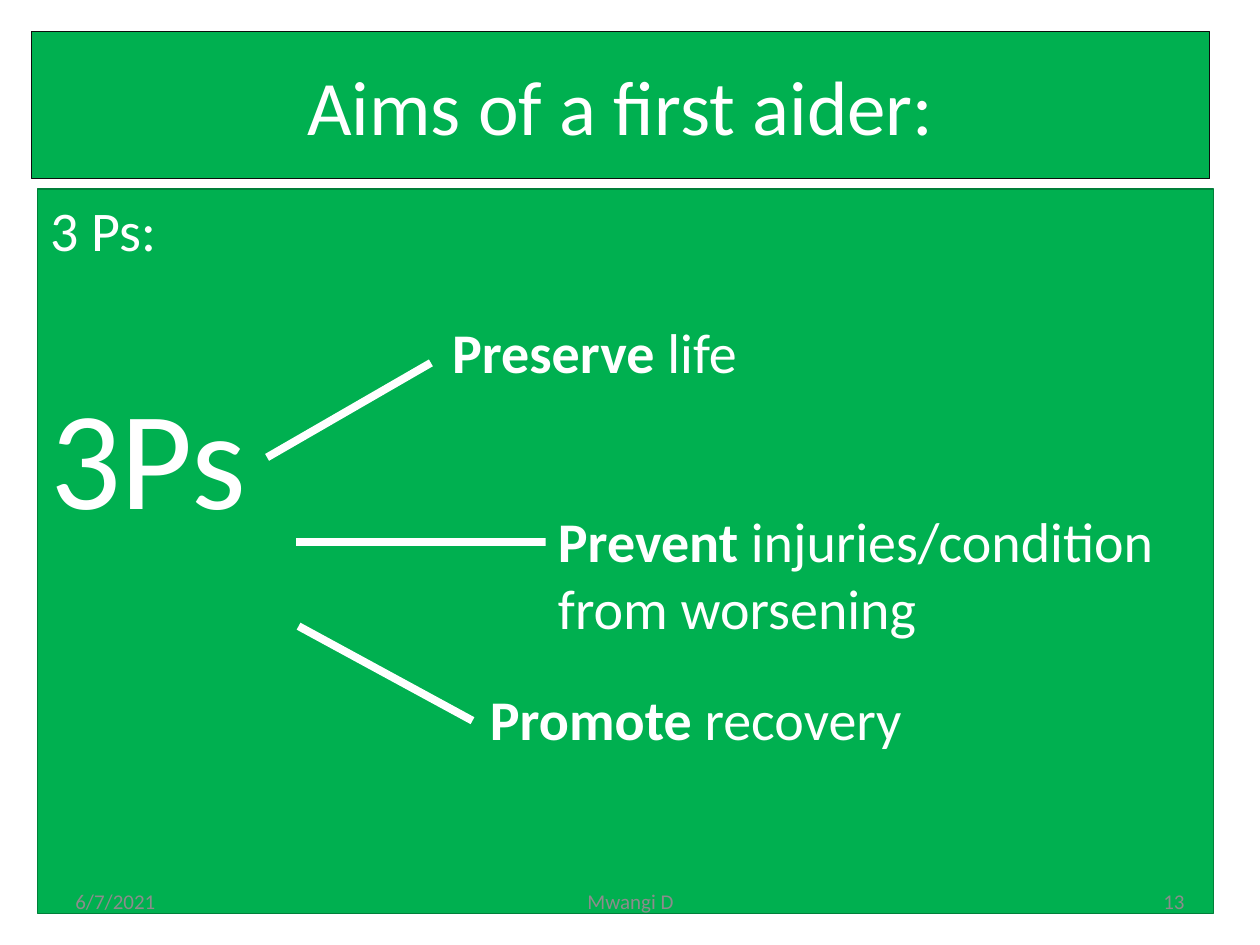
from lxml import etree
from pptx import Presentation
from pptx import util as u
from pptx.dml.color import RGBColor
from pptx.enum import shapes, text
from pptx.oxml.ns import qn

GREEN, WHITE, BLACK, EDGE, GREY = "00B050", "FFFFFF", "0D0D0D", "00803A", "8C8C8C"
LEFT, CENTER, RIGHT = text.PP_ALIGN.LEFT, text.PP_ALIGN.CENTER, text.PP_ALIGN.RIGHT
TOP, MIDDLE = text.MSO_ANCHOR.TOP, text.MSO_ANCHOR.MIDDLE

# Content: a paragraph is a list of (text, size, bold) runs
TITLE = [[("Aims of a first aider:", 44, False)]]
BODY = [[("3 Ps:", 32, False)], [("3Ps", 80, False)]]
BODY_GAP = 61  # points between the two body lines

# Each aim: box, paragraphs, spoke start and end
AIMS = [
    ((3.49, 2.47, 2.57, 0.64),
     [[("Preserve", 32, True), (" life", 32, False)]],
     (2.12, 3.63), (3.42, 2.88)),
    ((4.33, 3.97, 5.27, 1.18),
     [[("Prevent", 32, True), (" injuries/condition", 32, False)],
      [("from worsening", 32, False)]],
     (2.35, 4.3), (4.33, 4.3)),
    ((3.79, 5.38, 3.63, 0.64),
     [[("Promote", 32, True), (" recovery", 32, False)]],
     (2.37, 4.97), (3.75, 5.72)),
]

# Footer: left, width, words, alignment
FOOTER = [
    (0.5, 2.33, "6/7/2021", LEFT),
    (3.42, 3.17, "Mwangi D", CENTER),
    (7.17, 2.33, "13", RIGHT),
]


def rgb(value):
    return RGBColor.from_string(value)


def write(shape, paragraphs, color=WHITE, align=LEFT, anchor=TOP):
    frame = shape.text_frame
    frame.word_wrap = True
    frame.vertical_anchor = anchor
    for i, runs in enumerate(paragraphs):
        paragraph = frame.add_paragraph() if i else frame.paragraphs[0]
        paragraph.alignment = align
        for words, size, bold in runs:
            run = paragraph.add_run()
            run.text = words
            run.font.name = "Calibri"
            run.font.size = u.Pt(size)
            run.font.bold = bold
            run.font.color.rgb = rgb(color)
    return frame


def panel(slide, box, paragraphs, edge=None, **layout):
    shape = slide.shapes.add_shape(shapes.MSO_SHAPE.RECTANGLE, *map(u.Inches, box))
    shape.shadow.inherit = False
    shape.fill.solid()
    shape.fill.fore_color.rgb = rgb(GREEN)
    if edge:
        shape.line.color.rgb = rgb(edge)
        shape.line.width = u.Pt(0.75)
    else:
        shape.line.fill.background()
    return write(shape, paragraphs, **layout)


def spoke(slide, start, end):
    line = slide.shapes.add_connector(
        shapes.MSO_CONNECTOR.STRAIGHT, *map(u.Inches, start + end))
    line.line.color.rgb = rgb(WHITE)
    line.line.width = u.Pt(4.5)
    etree.SubElement(line._element.spPr, qn("a:effectLst"))


def main():
    deck = Presentation()
    deck.slide_width, deck.slide_height = u.Inches(10), u.Inches(7.5)
    slide = deck.slides.add_slide(deck.slide_layouts[6])

    # Title and body panels
    panel(slide, (0.25, 0.25, 9.35, 1.17), TITLE, BLACK, align=CENTER, anchor=MIDDLE)
    body = panel(slide, (0.3, 1.5, 9.33, 5.75), BODY, EDGE)
    body.paragraphs[1].space_before = u.Pt(BODY_GAP)

    # Footer
    for left, width, words, align in FOOTER:
        box = slide.shapes.add_textbox(*map(u.Inches, (left, 6.95, width, 0.4)))
        write(box, [[(words, 12, False)]], GREY, align, MIDDLE)

    # Spokes and aims
    for box, paragraphs, start, end in AIMS:
        spoke(slide, start, end)
        panel(slide, box, paragraphs)

    deck.save("out.pptx")


if __name__ == "__main__":
    main()
